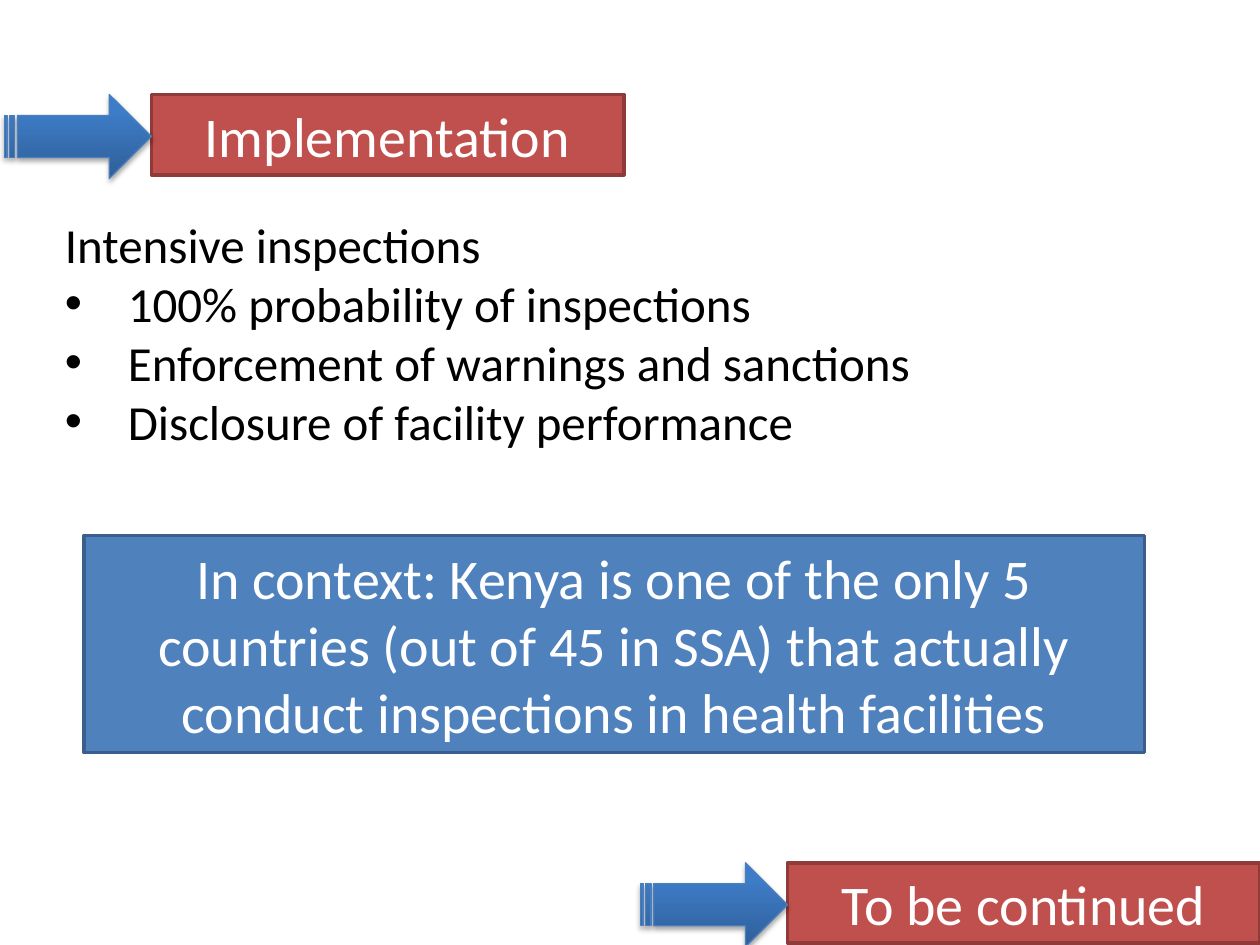
from copy import deepcopy
from dataclasses import dataclass

from lxml.etree import SubElement
from pptx import Presentation
from pptx.dml.color import RGBColor
from pptx.enum.shapes import MSO_SHAPE as Preset
from pptx.enum.text import MSO_ANCHOR as Anchor, MSO_AUTO_SIZE as AutoSize, PP_ALIGN as Align
from pptx.oxml.ns import qn
from pptx.util import Pt


@dataclass(frozen=True)
class Theme:
    font: str = "Calibri"
    body_size: int = 28
    box_size: int = 32
    black: str = "000000"
    white: str = "FFFFFF"
    red: tuple = ("C0504D", "8E3B39")
    blue: tuple = ("4F81BD", "3A5F8C")
    arrow_stops: tuple = ((0, "2F5F99"), (0.8, "3D7CC7"), (1, "3A7CCB"))
    arrow_line: str = "4B7EBC"


THEME = Theme()


def rgb(value):
    return RGBColor.from_string(value)


def style_runs(paragraph, size, color):
    for run in paragraph.runs:
        run.font.name = THEME.font
        run.font.size = Pt(size)
        run.font.color.rgb = rgb(color)


def add_banner(slide, box, text, colors):
    """Filled rectangle with centred white text."""
    fill, line = colors
    banner = slide.shapes.add_shape(Preset.RECTANGLE, *map(Pt, box))
    banner.shadow.inherit = False
    banner.fill.solid()
    banner.fill.fore_color.rgb = rgb(fill)
    banner.line.color.rgb = rgb(line)
    banner.line.width = Pt(2)
    frame = banner.text_frame
    frame.text = text
    frame.word_wrap = True
    frame.auto_size = AutoSize.SHAPE_TO_FIT_TEXT
    frame.vertical_anchor = Anchor.MIDDLE
    frame.paragraphs[0].alignment = Align.CENTER
    style_runs(frame.paragraphs[0], THEME.box_size, THEME.white)


def add_arrow(slide, box):
    """Striped arrow with a vertical gradient and a soft shadow."""
    arrow = slide.shapes.add_shape(Preset.STRIPED_RIGHT_ARROW, *map(Pt, box))
    arrow.line.color.rgb = rgb(THEME.arrow_line)
    arrow.line.width = Pt(0.75)

    # Gradient: the default has two stops, so one is added
    arrow.fill.gradient()
    arrow.fill.gradient_angle = 90
    properties = arrow.element.spPr
    stop_list = properties.find(".//" + qn("a:gsLst"))
    stop_list.append(deepcopy(stop_list[-1]))
    for stop, (position, color) in zip(arrow.fill.gradient_stops, THEME.arrow_stops):
        stop.position = position
        stop.color.rgb = rgb(color)

    # Shadow
    arrow.shadow.inherit = False
    shadow = SubElement(properties.find(qn("a:effectLst")), qn("a:outerShdw"),
                        blurRad=str(Pt(3.1)), dist=str(Pt(1.8)),
                        dir="5400000", rotWithShape="0")
    shade = SubElement(shadow, qn("a:srgbClr"), val=THEME.black)
    SubElement(shade, qn("a:alpha"), val="35000")


def add_step(slide, box, text):
    """Arrow leading into a red label."""
    left, top, width, height = box
    arrow_width = 84
    add_banner(slide, (left + arrow_width, top, width - arrow_width, height), text, THEME.red)
    add_arrow(slide, (left, top, arrow_width, 48))


def add_measures(slide, box, heading, measures):
    """Heading followed by a bulleted list."""
    frame = slide.shapes.add_textbox(*map(Pt, box)).text_frame
    frame.word_wrap = True
    frame.vertical_anchor = Anchor.MIDDLE
    frame.margin_bottom = Pt(37.8)  # one free line below the list
    frame.text = "\n".join([heading, *measures])
    for paragraph in frame.paragraphs:
        style_runs(paragraph, THEME.body_size, THEME.black)
    for paragraph in frame.paragraphs[1:]:
        properties = paragraph._p.get_or_add_pPr()
        properties.set("marL", str(Pt(36)))
        properties.set("indent", str(Pt(-36)))
        SubElement(properties, qn("a:buFont"), typeface="Arial")
        SubElement(properties, qn("a:buChar"), char="•")


def main():
    deck = Presentation()
    deck.slide_width, deck.slide_height = Pt(720), Pt(540)
    slide = deck.slides.add_slide(deck.slide_layouts[6])

    add_measures(slide, (30, 126, 630, 162), "Intensive inspections", [
        "100% probability of inspections",
        "Enforcement of warnings and sanctions",
        "Disclosure of facility performance",
    ])
    add_step(slide, (2.5, 54, 354, 46), "Implementation")
    add_banner(slide, (48, 306, 606, 124),
               "In context: Kenya is one of the only 5 countries (out of 45 in SSA) "
               "that actually conduct inspections in health facilities", THEME.blue)
    add_step(slide, (366, 493, 354, 46), "To be continued")

    deck.save("out.pptx")


if __name__ == "__main__":
    main()
